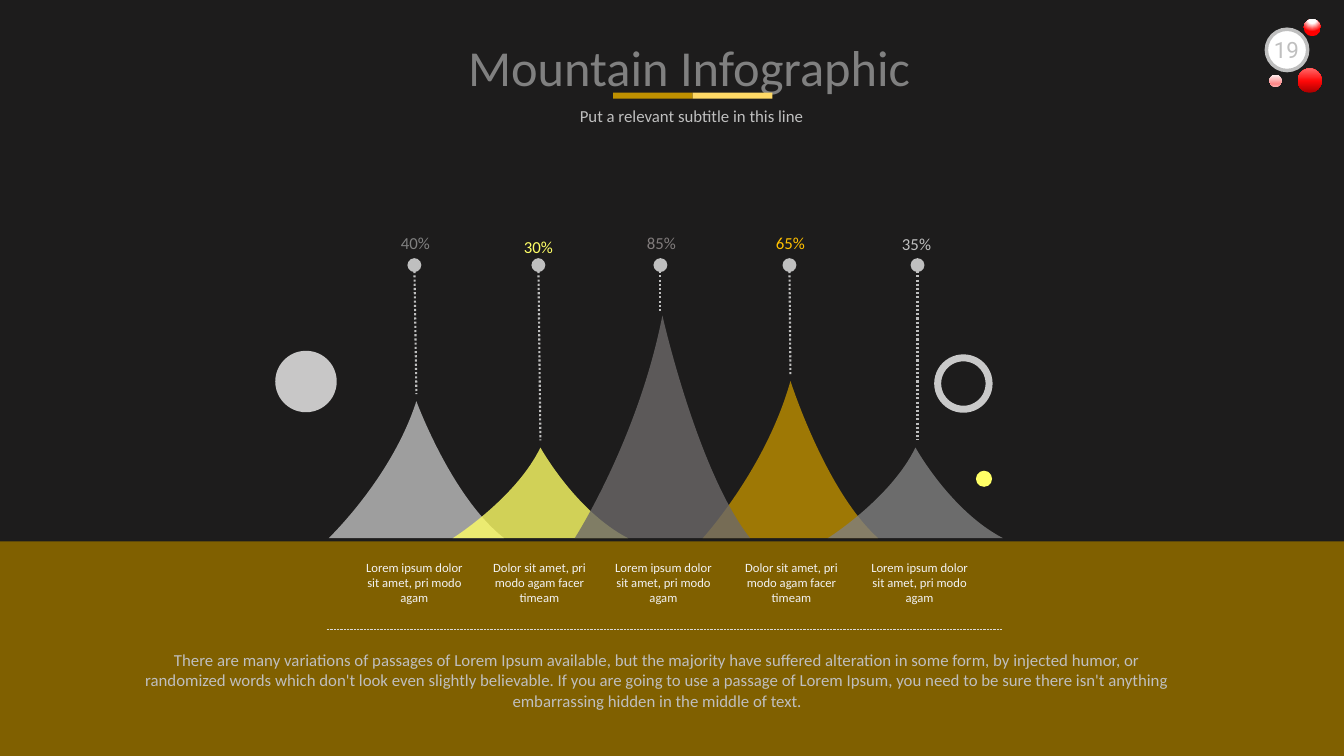
from lxml import etree
from pptx import Presentation, util as u
from pptx.dml.color import RGBColor
from pptx.enum import dml, shapes as sh, text as tx
from pptx.oxml import ns

COLS, ROWS = 13.33, 7.5
CELL = u.Inches(1)
BASE, HALF, DOT = 5.34, 0.87, 2.63
HUES = {
    "back": "1D1C1C", "band": "806000", "gold": "BF9000", "sand": "FFD966",
    "amber": "FFC000", "lemon": "FFFF66", "white": "FFFFFF", "pale": "F2F2F2",
    "mist": "E6E6E6", "light": "D9D9D9", "silver": "BFBFBF", "grey": "808080",
    "stone": "6C6969", "ash": "817C7C",
}
LOREM = "Lorem ipsum dolor sit amet, pri modo agam"
DOLOR = "Dolor sit amet, pri modo agam facer timeam"
PEAKS = [
    ((4.13, 3.98), "silver", "40%", "grey", (3.78, 2.28), 4.11, (4.13, 3.91)),
    ((5.36, 4.44), "lemon", "30%", "lemon", (5, 2.32), 5.34, (5.36, 4.37)),
    ((7.84, 3.78), "gold", "65%", "amber", (7.5, 2.28), 7.83, (7.84, 3.73)),
    ((6.57, 3.13), "stone", "85%", "ash", (6.22, 2.28), 6.55, (6.55, 3.1)),
    ((9.08, 4.44), "grey", "35%", "silver", (8.75, 2.29), 9.1, (9.1, 4.37)),
]
NOTES = [(3.63, LOREM), (4.87, DOLOR), (6.1, LOREM), (7.37, DOLOR), (8.64, LOREM)]
BALLS = [
    (12.93, 0.19, 0.17, [(0, "FFFFFF"), (35, "FFFFFF"), (100, "FF0000")], None),
    (12.87, 0.68, 0.24, [(0, "AB0000"), (48, "FF0808"), (100, "FF6666")], 270),
    (12.59, 0.74, 0.12, [(0, "FFF2F2"), (74, "FF8C8C"), (83, "FF8C8C"),
                         (100, "FFB2B2")], 90),
]
BODY = (
    "There are many variations of passages of Lorem Ipsum available, but the "
    "majority have suffered alteration in some form, by injected humor, or "
    "randomized words which don't look even slightly believable. If you are "
    "going to use a passage of Lorem Ipsum, you need to be sure there isn't "
    "anything embarrassing hidden in the middle of text."
)


def grid(*cells):
    """Turn grid columns and rows into lengths."""
    return [int(n * CELL) for n in cells]


def hue(name):
    """Look up a colour."""
    return RGBColor.from_string(HUES[name])


def style(shape, fill=None, line=None, width=1, alpha=None):
    """Set fill, outline and opacity of a shape."""
    shape.shadow.inherit = False
    if fill:
        shape.fill.solid()
        shape.fill.fore_color.rgb = hue(fill)
    else:
        shape.fill.background()
    if line:
        shape.line.color.rgb = hue(line)
        shape.line.width = u.Pt(width)
    else:
        shape.line.fill.background()
    if alpha:
        for tone in shape._element.spPr.iter(ns.qn("a:srgbClr")):
            etree.SubElement(tone, ns.qn("a:alpha"), val=str(alpha * 1000))
    return shape


def block(page, box, kind=sh.MSO_SHAPE.OVAL, **look):
    """Draw a preset shape."""
    return style(page.shapes.add_shape(kind, *grid(*box)), **look)


def write(page, words, box, size=12, color="silver", font="Calibri",
          mid=True, inset=(0.1, 0.05, 0.1, 0.05), lead=None):
    """Write one centred paragraph."""
    frame = page.shapes.add_textbox(*grid(*box)).text_frame
    frame.word_wrap = True
    frame.vertical_anchor = tx.MSO_ANCHOR.MIDDLE if mid else tx.MSO_ANCHOR.TOP
    (frame.margin_left, frame.margin_top,
     frame.margin_right, frame.margin_bottom) = grid(*inset)
    para = frame.paragraphs[0]
    para.alignment = tx.PP_ALIGN.CENTER
    para.line_spacing = lead
    run = para.add_run()
    run.text = words
    run.font.size = u.Pt(size)
    run.font.name = font
    run.font.color.rgb = hue(color)


def rule(page, start, end, color, width, head=False):
    """Draw a dotted line, with a round head if asked."""
    line = page.shapes.add_connector(
        sh.MSO_CONNECTOR.STRAIGHT, *grid(*start, *end))
    line.line.color.rgb = hue(color)
    line.line.width = u.Pt(width)
    line.line.dash_style = dml.MSO_LINE.ROUND_DOT
    props = line._element.spPr
    if head:
        etree.SubElement(props.find(ns.qn("a:ln")), ns.qn("a:headEnd"),
                         type="oval", w="lg", len="lg")
    etree.SubElement(props, ns.qn("a:effectLst"))


def bend(side, knots):
    """Turn a straight side into a cubic curve."""
    arc = etree.Element(ns.qn("a:cubicBezTo"))
    for x, y in knots:
        etree.SubElement(arc, ns.qn("a:pt"), x=str(x), y=str(y))
    side.getparent().replace(side, arc)


def mount(page, peak, fill):
    """Draw a mountain with two curved slopes."""
    mid, top = peak
    wide, high = grid(2 * HALF, BASE - top)
    tip, foot = (wide // 2, 0), (0, high)
    left, crest = grid(mid - HALF, top)
    pen = page.shapes.build_freeform(left, crest + high)
    pen.add_line_segments([(left + wide, crest + high),
                           (left + tip[0], crest), (left, crest + high)])
    hill = style(pen.convert_to_shape(), fill=fill, alpha=80)
    _, east, west = list(hill._element.spPr.iter(ns.qn("a:lnTo")))
    bend(east, [(int(0.7 * wide), int(0.7 * high)), tip, tip])
    bend(west, [(int(0.36 * wide), int(0.56 * high)), foot, foot])


def ball(page, x, y, size, stops, angle):
    """Draw a ball with a linear or round gradient."""
    props = block(page, (x, y, size, size))._element.spPr
    grad = etree.Element(ns.qn("a:gradFill"), rotWithShape="1")
    steps = etree.SubElement(grad, ns.qn("a:gsLst"))
    for place, tone in stops:
        stop = etree.SubElement(steps, ns.qn("a:gs"), pos=str(place * 1000))
        etree.SubElement(stop, ns.qn("a:srgbClr"), val=tone)
    if angle is None:
        ring = etree.SubElement(grad, ns.qn("a:path"), path="circle")
        etree.SubElement(ring, ns.qn("a:fillToRect"), l="50000", t="-80000",
                         r="50000", b="180000")
    else:
        etree.SubElement(grad, ns.qn("a:lin"), ang=str(angle * 60000), scaled="0")
    props.replace(props.find(ns.qn("a:noFill")), grad)


def badge(page):
    """Draw the page number among its balls."""
    block(page, (12.56, 0.29, 0.41, 0.41), fill="white", line="silver", width=2.5)
    for spec in BALLS:
        ball(page, *spec)
    write(page, "19", (12.51, 0.31, 0.5, 0.37), size=16, font="Roboto", mid=False)


def main():
    """Build the slide and save it."""
    deck = Presentation()
    deck.slide_width, deck.slide_height = grid(COLS, ROWS)
    page = deck.slides.add_slide(deck.slide_layouts[6])
    page.background.fill.solid()
    page.background.fill.fore_color.rgb = hue("back")
    bar = sh.MSO_SHAPE.RECTANGLE
    block(page, (0, 5.37, COLS, ROWS - 5.37), bar, fill="band")
    flat = (0, 0, 0, 0)
    for col, note in NOTES:
        write(page, note, (col, 5.47, 0.96, 0.61), size=9, color="pale", inset=flat)
    block(page, (2.73, 3.48, 0.61, 0.61), fill="mist", alpha=85)
    block(page, (9.3, 3.55, 0.51, 0.51), line="mist", width=5, alpha=85)
    block(page, (9.68, 4.67, 0.16, 0.16), fill="lemon")
    for peak, fill, share, tone, tag, dot, end in PEAKS:
        mount(page, peak, fill)
        write(page, share, (*tag, 0.68, 0.25), color=tone, inset=flat)
        rule(page, (dot, DOT), end, "silver", 1.5, head=True)
    write(page, BODY, (1.32, 6.4, 10.46, 0.7), mid=False,
          inset=(0.1, 0.05, 0.16, 0.04))
    rule(page, (3.24, 6.24), (9.94, 6.24), "light", 0.5)
    badge(page)
    write(page, "Mountain Infographic", (3.98, 0.01, 5.71, 1.01), size=36,
          color="grey", mid=False, lead=1.5)
    write(page, "Put a relevant subtitle in this line", (5.28, 0.95, 3.16, 0.4))
    for i, tone in enumerate(("gold", "sand")):
        block(page, (6.08 + 0.79 * i, 0.92, 0.79, 0.06), bar, fill=tone)
    deck.save("out.pptx")


if __name__ == "__main__":
    main()
